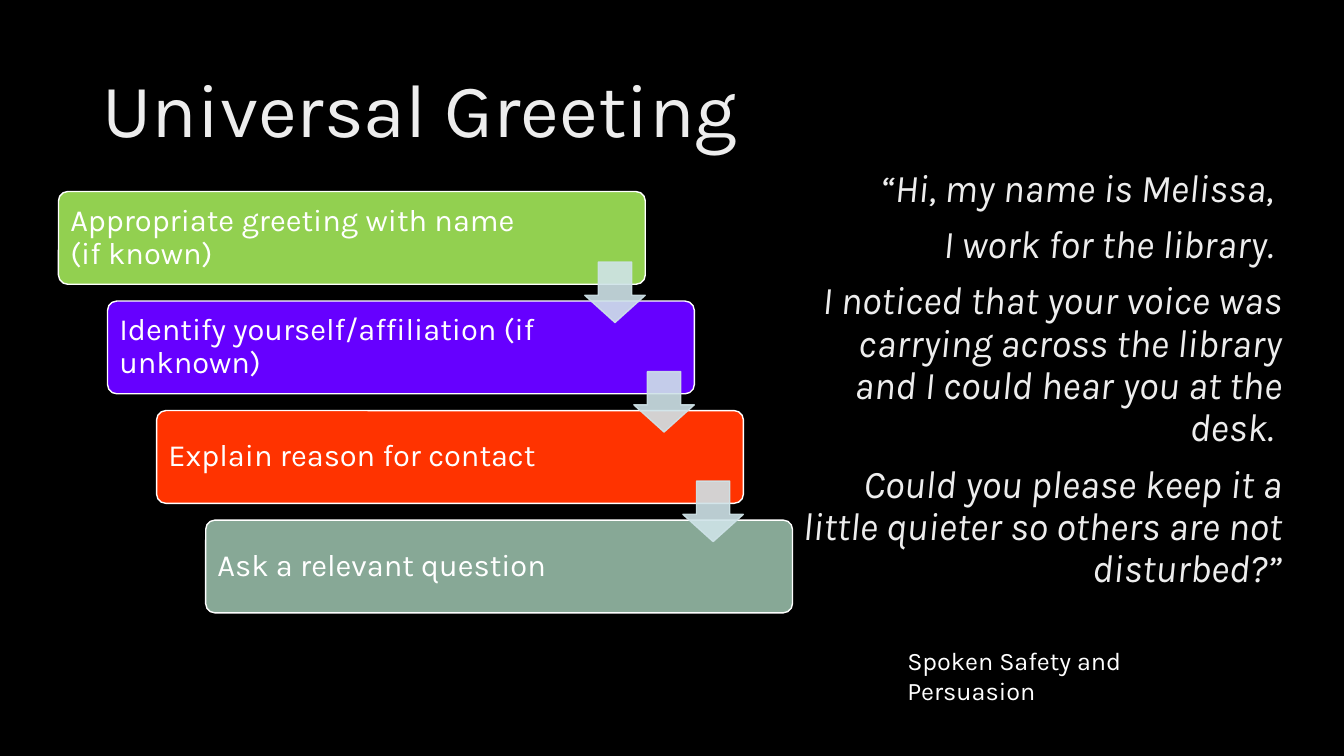
from lxml import etree
from pptx import Presentation
from pptx import util as u
from pptx.dml.color import RGBColor
from pptx.enum import shapes, text
from pptx.oxml.ns import qn

COLOURS = {
    "background": "000000",
    "soft white": "EDEDED",
    "white": "FFFFFF",
    "green": "92D050",
    "violet": "6600FF",
    "red": "FF3300",
    "sage": "87A896",
    "arrow": "CFE3E8",
}


def rgb(name):
    return RGBColor.from_string(COLOURS[name])


def style(paragraph, size, colour, spacing=0.9):
    paragraph.line_spacing = spacing
    paragraph.font.name = "Karla"
    paragraph.font.size = u.Pt(size)
    paragraph.font.color.rgb = rgb(colour)


deck = Presentation()
deck.slide_width = u.Inches(13.33)
deck.slide_height = u.Inches(7.5)
slide = deck.slides.add_slide(deck.slide_layouts[6])
slide.background.fill.solid()
slide.background.fill.fore_color.rgb = rgb("background")

title = slide.shapes.add_textbox(u.Inches(0.92), u.Inches(0.4), u.Inches(11.5), u.Inches(1.45)).text_frame
title.word_wrap = True
title.vertical_anchor = text.MSO_ANCHOR.MIDDLE
title.text = "Universal Greeting"
style(title.paragraphs[0], 54, "soft white")

sentences = [
    "“Hi, my name is Melissa, ",
    "I work for the library. ",
    "I noticed that your voice was carrying across the library and I could hear you at the desk. ",
    "Could you please keep it a little quieter so others are not disturbed?”",
]
speech = slide.shapes.add_textbox(u.Inches(7.77), u.Inches(1.62), u.Inches(5.04), u.Inches(4.82)).text_frame
speech.word_wrap = True
speech.text = "\n".join(sentences)
for number, sentence in enumerate(speech.paragraphs):
    sentence.alignment = text.PP_ALIGN.RIGHT
    style(sentence, 28, "soft white")
    sentence.font.italic = True
    if number:
        sentence.space_before = u.Pt(10)

course = slide.shapes.add_textbox(u.Inches(8.9), u.Inches(6.35), u.Inches(3.51), u.Inches(0.4)).text_frame
course.word_wrap = False
course.text = "Spoken Safety and Persuasion"
style(course.paragraphs[0], 18, "white", 1.0)

steps = [
    ("Appropriate greeting with name (if known)", "green"),
    ("Identify yourself/affiliation (if unknown)", "violet"),
    ("Explain reason for contact", "red"),
    ("Ask a relevant question", "sage"),
]
shift_right = 1.46 / (len(steps) - 1)
shift_down = 3.26 / (len(steps) - 1)

for number, (wording, colour) in enumerate(steps):
    step = slide.shapes.add_shape(
        shapes.MSO_SHAPE.ROUNDED_RECTANGLE,
        u.Inches(0.58 + number * shift_right), u.Inches(1.9 + number * shift_down),
        u.Inches(5.82), u.Inches(0.92))
    step.adjustments[0] = 0.1
    step.shadow.inherit = False
    step.fill.solid()
    step.fill.fore_color.rgb = rgb(colour)
    step.line.color.rgb = rgb("white")
    step.line.width = u.Pt(1)
    frame = step.text_frame
    frame.word_wrap = True
    frame.vertical_anchor = text.MSO_ANCHOR.MIDDLE
    frame.margin_left = u.Inches(0.09)
    frame.margin_right = u.Inches(1.15)
    frame.text = wording
    frame.paragraphs[0].alignment = text.PP_ALIGN.LEFT
    style(frame.paragraphs[0], 22, "white")

for number in range(len(steps) - 1):
    arrow = slide.shapes.add_shape(
        shapes.MSO_SHAPE.DOWN_ARROW,
        u.Inches(5.8 + number * shift_right), u.Inches(2.6 + number * shift_down),
        u.Inches(0.6), u.Inches(0.6))
    arrow.adjustments[0] = 0.55
    arrow.adjustments[1] = 0.45
    arrow.shadow.inherit = False
    arrow.fill.solid()
    arrow.fill.fore_color.rgb = rgb("arrow")
    arrow.line.color.rgb = rgb("arrow")
    arrow.line.width = u.Pt(1)
    for tint in arrow.element.spPr.iter(qn("a:srgbClr")):
        etree.SubElement(tint, qn("a:alpha")).set("val", "90000")

deck.save("out.pptx")
